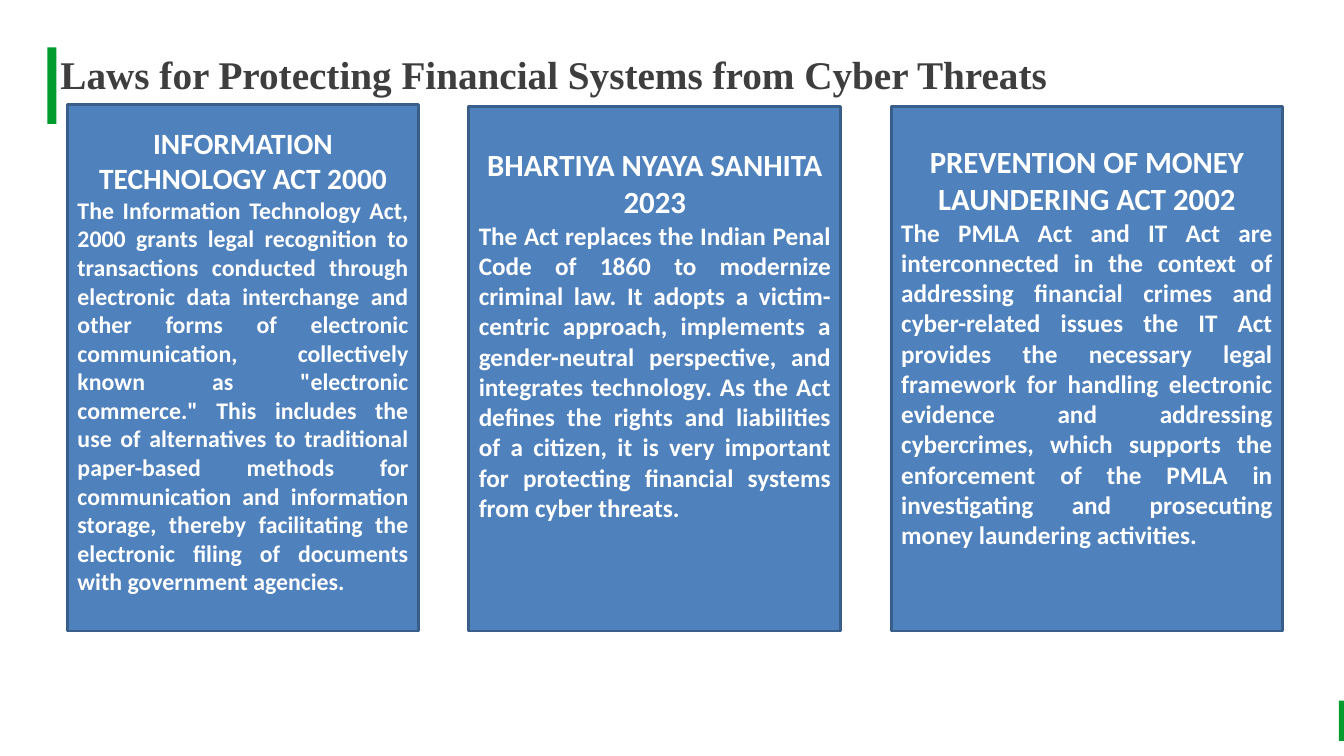
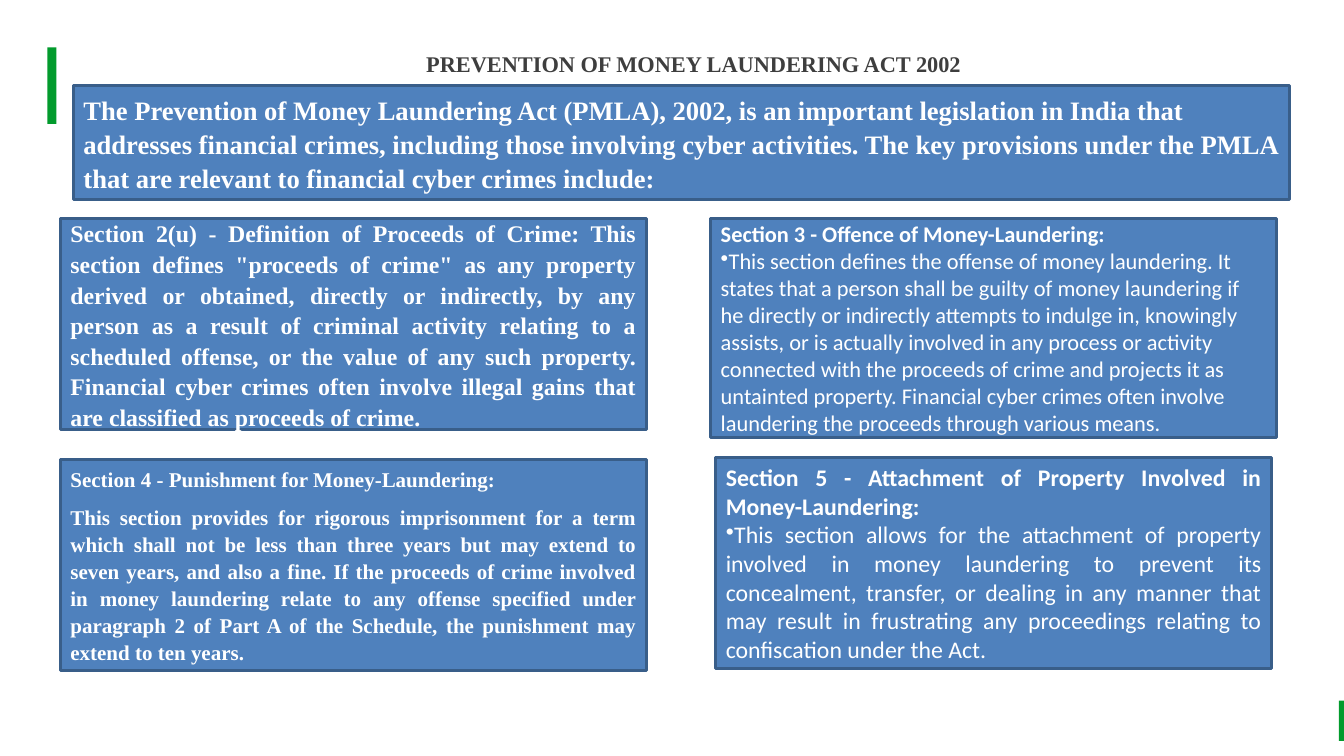
import pptx
import pptx.util
import pptx.dml.color
import pptx.enum.shapes
import pptx.enum.text
import pptx.oxml.ns
import lxml.etree
from dataclasses import dataclass

PX = 9144  # EMU in one px, 100 px to the inch
ALIGN = pptx.enum.text.PP_ALIGN
ANCHOR = pptx.enum.text.MSO_ANCHOR


@dataclass(frozen=True)
class Theme:
    green: str = "029B2D"
    box: str = "4F81BD"
    edge: str = "395E89"
    ink: str = "3E3E3E"
    light: str = "FFFFFF"
    serif: str = "Times New Roman"
    sans: str = "Calibri"
    line: int = 2
    large: int = 28
    small: int = 16
    pad: tuple = (10, 5)
    lead: float = 1.07


THEME = Theme()
SIZE = (1333, 750)
BANDS = [(1328, 695, 5, 40), (47, 47, 9, 76)]

LAWS = "Laws for Protecting Financial Systems from Cyber Threats"
LEFT, GAP, BASE = 67, 50, 626
# top, width, text inset, heading size, body size, heading, body
CARDS = [
    (104, 348, 20, 21, 17, "INFORMATION TECHNOLOGY ACT 2000",
     "The Information Technology Act, 2000 grants legal recognition to "
     "transactions conducted through electronic data interchange and other "
     "forms of electronic communication, collectively known as \"electronic "
     "commerce.\" This includes the use of alternatives to traditional "
     "paper-based methods for communication and information storage, thereby "
     "facilitating the electronic filing of documents with government "
     "agencies."),
    (106, 369, 39, 22, 18, "BHARTIYA NYAYA SANHITA 2023",
     "The Act replaces the Indian Penal Code of 1860 to modernize criminal "
     "law. It adopts a victim-centric approach, implements a gender-neutral "
     "perspective, and integrates technology. As the Act defines the rights "
     "and liabilities of a citizen, it is very important for protecting "
     "financial systems from cyber threats."),
    (106, 388, 36, 22, 18, "PREVENTION OF MONEY LAUNDERING ACT 2002",
     "The PMLA Act and IT Act are interconnected in the context of addressing "
     "financial crimes and cyber-related issues the IT Act provides the "
     "necessary legal framework for handling electronic evidence and "
     "addressing cybercrimes, which supports the enforcement of the PMLA in "
     "investigating and prosecuting money laundering activities."),
]

ACT = "PREVENTION OF MONEY LAUNDERING ACT 2002"
SERIF = dict(font=THEME.serif, lead=THEME.lead)
# place, shared paragraph style, paragraphs with their own style
PARTS = [
    ((73, 85, 1206, 113), dict(SERIF, size=19), [
        ("The Prevention of Money Laundering Act (PMLA), 2002, is an important "
         "legislation in India that addresses financial crimes, including "
         "those involving cyber activities. The key provisions under the PMLA "
         "that are relevant to financial cyber crimes include:", {})]),
    ((60, 217, 581, 209), dict(SERIF, size=17, align=ALIGN.JUSTIFY), [
        ("Section 2(u) - Definition of Proceeds of Crime: This section defines "
         "\"proceeds of crime\" as any property derived or obtained, directly "
         "or indirectly, by any person as a result of criminal activity "
         "relating to a scheduled offense, or the value of any such property. "
         "Financial cyber crimes often involve illegal gains that are "
         "classified as proceeds of crime.", {})]),
    ((710, 454, 551, 209), dict(size=17, align=ALIGN.JUSTIFY), [
        ("Section 5 - Attachment of Property Involved in Money-Laundering:",
         {}),
        ("This section allows for the attachment of property involved in money "
         "laundering to prevent its concealment, transfer, or dealing in any "
         "manner that may result in frustrating any proceedings relating to "
         "confiscation under the Act.", dict(bold=False, hang=12))]),
    ((60, 456, 581, 209), dict(SERIF, size=15, align=ALIGN.JUSTIFY), [
        ("Section 4 - Punishment for Money-Laundering:", {}),
        ("This section provides for rigorous imprisonment for a term which "
         "shall not be less than three years but may extend to seven years, "
         "and also a fine. If the proceeds of crime involved in money "
         "laundering relate to any offense specified under paragraph 2 of "
         "Part A of the Schedule, the punishment may extend to ten years.",
         dict(before=8))]),
    ((705, 217, 561, 217), dict(size=16), [
        ("Section 3 - Offence of Money-Laundering:", {}),
        ("This section defines the offense of money laundering. It states that "
         "a person shall be guilty of money laundering if he directly or "
         "indirectly attempts to indulge in, knowingly assists, or is actually "
         "involved in any process or activity connected with the proceeds of "
         "crime and projects it as untainted property. Financial cyber crimes "
         "often involve laundering the proceeds through various means.",
         dict(bold=False, hang=11))]),
]


def emu(place):
    return [n * PX for n in place]


def rgb(code):
    return pptx.dml.color.RGBColor.from_string(code)


def bullet(par, hang):
    props = par._p.get_or_add_pPr()
    props.set("marL", "0")
    props.set("indent", str(-hang * PX))
    qn = pptx.oxml.ns.qn
    tint = lxml.etree.SubElement(props, qn("a:buClr"))
    lxml.etree.SubElement(tint, qn("a:srgbClr")).set("val", THEME.light)
    lxml.etree.SubElement(props, qn("a:buChar")).set("char", "•")


def style(par, size, font=THEME.sans, color=THEME.light, bold=True,
          align=ALIGN.LEFT, lead=None, before=None, hang=None):
    par.alignment = align
    if lead:
        par.line_spacing = lead
    if before:
        par.space_before = pptx.util.Pt(before)
    if hang:
        bullet(par, hang)
    for run in par.runs:
        run.font.size = pptx.util.Pt(size)
        run.font.name = font
        run.font.bold = bold
        run.font.color.rgb = rgb(color)


def write(shape, items, pad, anchor, **base):
    """Fill a shape with (text, style) paragraphs over a base style."""
    frame = shape.text_frame
    frame.word_wrap = True
    frame.vertical_anchor = anchor
    side, top, foot = emu(pad)
    frame.margin_left = frame.margin_right = side
    frame.margin_top, frame.margin_bottom = top, foot
    for i, (text, own) in enumerate(items):
        par = frame.add_paragraph() if i else frame.paragraphs[0]
        par.text = text
        style(par, **{**base, **own})


def rect(slide, place, fill, edge=None):
    kind = pptx.enum.shapes.MSO_SHAPE.RECTANGLE
    shape = slide.shapes.add_shape(kind, *emu(place))
    shape.shadow.inherit = False
    shape.fill.solid()
    shape.fill.fore_color.rgb = rgb(fill)
    if edge:
        shape.line.color.rgb = rgb(edge)
        shape.line.width = pptx.util.Pt(THEME.line)
    else:
        shape.line.fill.background()
    return shape


def start(deck, title, place, size, align):
    """Add a slide with the green bands and its title."""
    slide = deck.slides.add_slide(deck.slide_layouts[6])
    for band in BANDS:
        rect(slide, band, THEME.green)
    head = slide.shapes.add_textbox(*emu(place))
    write(head, [(title, {})], (0, 0, 0), ANCHOR.TOP, size=size,
          font=THEME.serif, color=THEME.ink, align=align)
    return slide


def laws(deck):
    slide = start(deck, LAWS, (60, 50, 1198, 75), THEME.large, ALIGN.LEFT)
    left = LEFT
    side, foot = THEME.pad
    for top, width, inset, big, size, head, body in CARDS:
        card = rect(slide, (left, top, width, BASE - top),
                    THEME.box, THEME.edge)
        write(card, [(head, dict(size=big, align=ALIGN.CENTER)), (body, {})],
              (side, inset, foot), ANCHOR.TOP, size=size, align=ALIGN.JUSTIFY)
        left += width + GAP


def act(deck):
    slide = start(deck, ACT, (60, 50, 1256, 27), THEME.small, ALIGN.CENTER)
    side, foot = THEME.pad
    for place, base, items in PARTS:
        part = rect(slide, place, THEME.box, THEME.edge)
        write(part, items, (side, foot, foot), ANCHOR.MIDDLE, **base)


def main():
    deck = pptx.Presentation()
    deck.slide_width, deck.slide_height = emu(SIZE)
    laws(deck)
    act(deck)
    deck.save("out.pptx")


if __name__ == "__main__":
    main()
